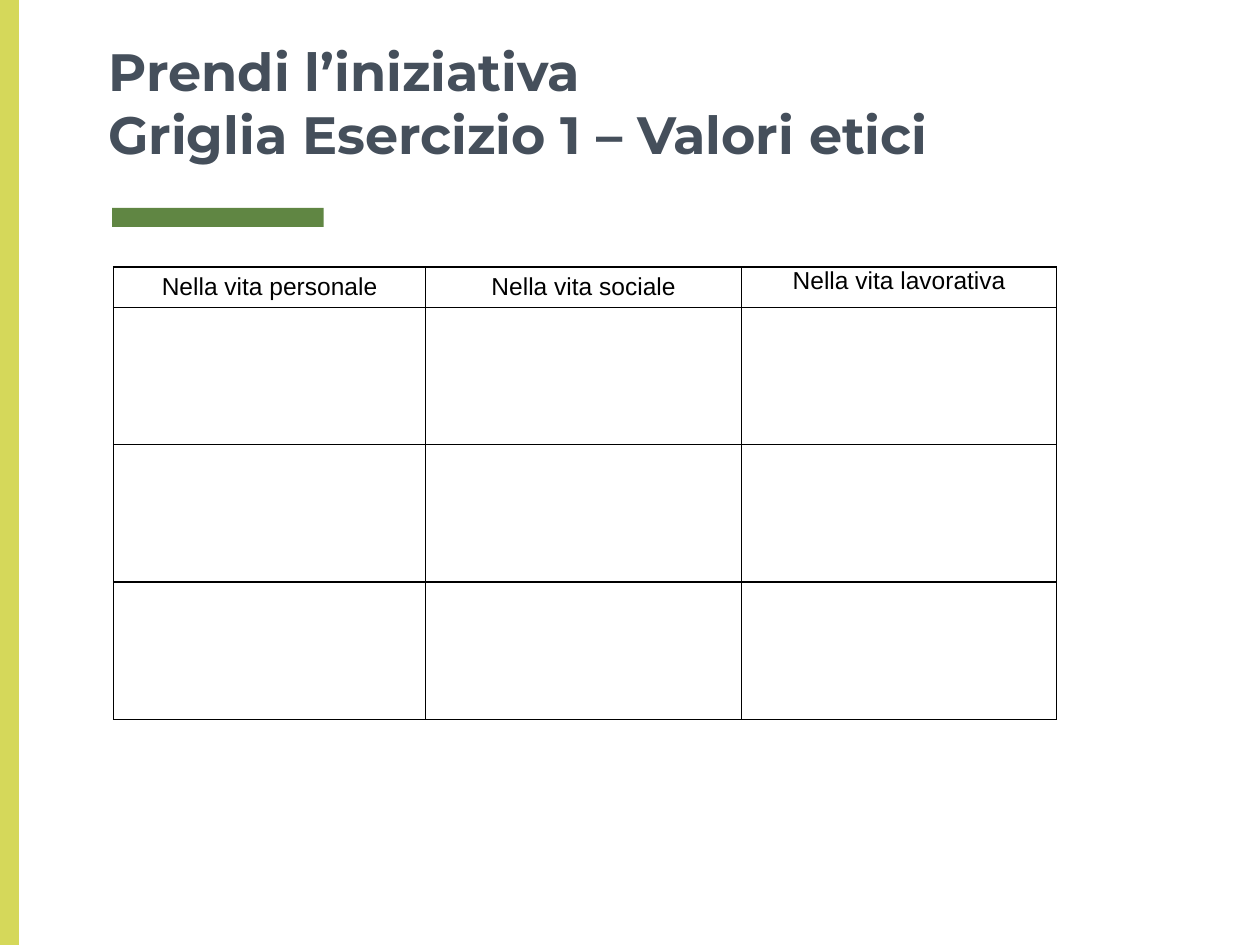
from lxml.etree import SubElement
from pptx import Presentation
from pptx.dml.color import RGBColor
from pptx.enum.shapes import MSO_SHAPE
from pptx.enum.text import MSO_ANCHOR, MSO_AUTO_SIZE, PP_ALIGN
from pptx.oxml.ns import qn
from pptx.util import Pt

LIME = RGBColor(0xD5, 0xD8, 0x5A)
GREEN = RGBColor(0x60, 0x86, 0x43)
SLATE = RGBColor(0x45, 0x4F, 0x5B)
BLACK = RGBColor(0, 0, 0)


class Deck:
    """Holds the style and the current slide."""

    title_font = {"name": "Montserrat", "size": Pt(30), "bold": True}
    cell_font = {"name": "Arial", "size": Pt(14), "bold": False}
    cell_box = {"margin_left": Pt(5), "margin_right": Pt(5),
                "margin_top": 0, "margin_bottom": 0}
    rule = Pt(0.75)

    def __init__(self, show):
        self.slide = show.slides.add_slide(show.slide_layouts[5])

    def put(self, item, values):
        for key, value in values.items():
            setattr(item, key, value)

    def style(self, run, font, color):
        self.put(run.font, font)
        run.font.color.rgb = color

    def bar(self, left, top, width, height, color):
        shape = self.slide.shapes.add_shape(
            MSO_SHAPE.RECTANGLE, Pt(left), Pt(top), Pt(width), Pt(height))
        shape.shadow.inherit = False
        shape.fill.solid()
        shape.fill.fore_color.rgb = color
        shape.line.fill.background()

    def title(self, left, top, width, height, lines):
        shape = self.slide.shapes.title
        self.put(shape, {"left": Pt(left), "top": Pt(top),
                         "width": Pt(width), "height": Pt(height)})
        frame = shape.text_frame
        self.put(frame, {"auto_size": MSO_AUTO_SIZE.NONE, "word_wrap": True,
                         "vertical_anchor": MSO_ANCHOR.BOTTOM,
                         "margin_left": Pt(7.2), "margin_right": Pt(7.2),
                         "margin_top": Pt(7.2), "margin_bottom": Pt(7.2)})
        para = frame.paragraphs[0]
        para.alignment = PP_ALIGN.LEFT
        for i, line in enumerate(lines):
            if i:
                para.add_line_break()
            run = para.add_run()
            run.text = line
            self.style(run, self.title_font, SLATE)

    def border(self, cell):
        props = cell._tc.get_or_add_tcPr()
        for side in ("a:lnL", "a:lnR", "a:lnT", "a:lnB"):
            line = SubElement(props, qn(side), w=str(self.rule))
            fill = SubElement(line, qn("a:solidFill"))
            SubElement(fill, qn("a:srgbClr"), val=str(BLACK))

    def grid(self, left, top, cols, rows, heads):
        table = self.slide.shapes.add_table(
            len(rows), len(cols), Pt(left), Pt(top),
            Pt(sum(cols)), Pt(sum(rows))).table
        self.put(table, {"first_row": False, "horz_banding": False})
        for col, width in zip(table.columns, cols):
            col.width = Pt(width)
        for row, height in zip(table.rows, rows):
            row.height = Pt(height)
        for cell in table.iter_cells():
            self.put(cell, self.cell_box)
            self.border(cell)
            cell.fill.background()
        # Header row
        for i, (text, anchor) in enumerate(heads):
            cell = table.cell(0, i)
            cell.vertical_anchor = anchor
            para = cell.text_frame.paragraphs[0]
            para.alignment = PP_ALIGN.CENTER
            run = para.add_run()
            run.text = text
            self.style(run, self.cell_font, BLACK)


def main():
    show = Presentation()
    show.slide_width, show.slide_height = Pt(720), Pt(540)
    deck = Deck(show)

    # Side band and accent bar
    deck.bar(64, 118.8, 121, 10.8, GREEN)
    deck.bar(0, 0, 10.8, 540, LIME)

    # Title
    deck.title(54.7, 0, 611.3, 101.5,
               ["Prendi l’iniziativa", "Griglia Esercizio 1 – Valori etici"])

    # Exercise grid
    deck.grid(64.8, 152.6, [178.6, 180.3, 180.3], [23] + [78.5] * 3,
              [("Nella vita personale", MSO_ANCHOR.MIDDLE),
               ("Nella vita sociale", MSO_ANCHOR.MIDDLE),
               ("Nella vita lavorativa", MSO_ANCHOR.TOP)])

    show.save("out.pptx")


if __name__ == "__main__":
    main()
